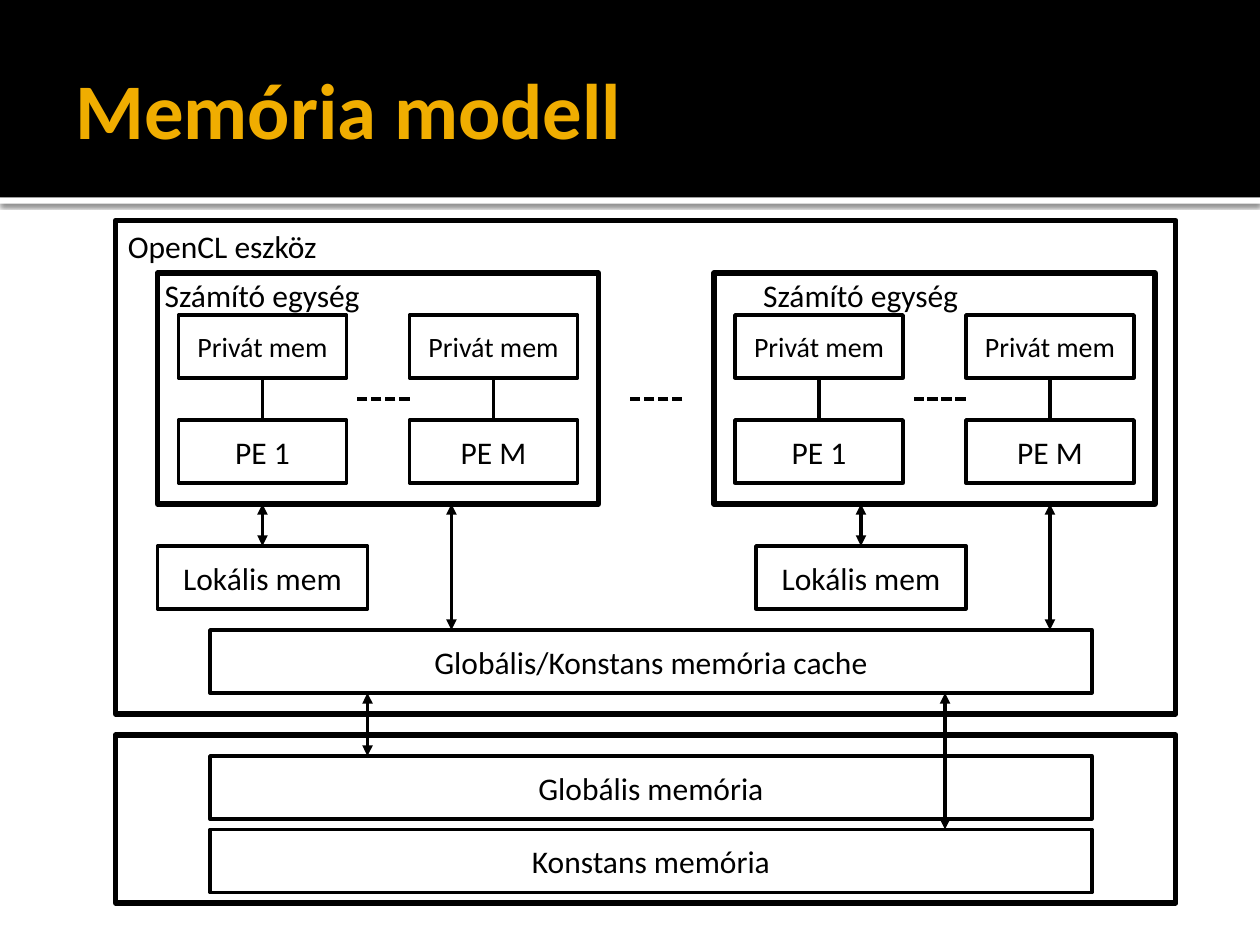
import pptx
import pptx.dml.color
import pptx.enum.dml
import pptx.enum.shapes
import pptx.enum.text
import pptx.oxml
import pptx.oxml.ns
import pptx.util

BLACK = pptx.dml.color.RGBColor(0x00, 0x00, 0x00)
WHITE = pptx.dml.color.RGBColor(0xFF, 0xFF, 0xFF)
AMBER = pptx.dml.color.RGBColor(0xF0, 0xAD, 0x00)
FONT = "Calibri"
CELL_HEIGHT = 6
PE_WIDTH = 16
LOCAL_WIDTH = 20
MEMORY_WIDTH = 84
THIN, THICK = 2, 3


def grid(steps):
    """Length of grid steps; twelve steps make one inch."""
    return pptx.util.Cm(steps * 2.54 / 12)


def write(shape, text, size=18, color=BLACK, bold=False,
          align=pptx.enum.text.PP_ALIGN.LEFT,
          anchor=pptx.enum.text.MSO_ANCHOR.TOP):
    frame = shape.text_frame
    frame.word_wrap = True
    frame.vertical_anchor = anchor
    paragraph = frame.paragraphs[0]
    paragraph.alignment = align
    run = paragraph.add_run()
    run.text = text
    run.font.name = FONT
    run.font.size = pptx.util.Pt(size)
    run.font.bold = bold
    run.font.color.rgb = color


def add_label(slide, text, left, top, width, height, **text_format):
    label = slide.shapes.add_textbox(grid(left), grid(top), grid(width), grid(height))
    write(label, text, **text_format)
    return label


def add_box(slide, left, top, width, height, text="", size=18,
            fill=WHITE, weight=THIN):
    box = slide.shapes.add_shape(
        pptx.enum.shapes.MSO_SHAPE.RECTANGLE,
        grid(left), grid(top), grid(width), grid(height))
    box.shadow.inherit = False
    box.fill.solid()
    box.fill.fore_color.rgb = fill
    if weight:
        box.line.color.rgb = BLACK
        box.line.width = pptx.util.Pt(weight)
    else:
        box.line.fill.background()
    if text:
        write(box, text, size=size, align=pptx.enum.text.PP_ALIGN.CENTER,
              anchor=pptx.enum.text.MSO_ANCHOR.MIDDLE)
    return box


def add_line(slide, x1, y1, x2, y2, arrows=False, dashed=False):
    line = slide.shapes.add_connector(
        pptx.enum.shapes.MSO_CONNECTOR.STRAIGHT,
        grid(x1), grid(y1), grid(x2), grid(y2))
    line.line.color.rgb = BLACK
    line.line.width = pptx.util.Pt(THIN)
    if dashed:
        line.line.dash_style = pptx.enum.dml.MSO_LINE.SQUARE_DOT
    if arrows:
        outline = line.line._get_or_add_ln()
        for end in ("a:headEnd", "a:tailEnd"):
            pptx.oxml.ns.qn(end)
            tip = outline.makeelement(pptx.oxml.ns.qn(end), {"type": "triangle"})
            outline.append(tip)
    properties = line._element.spPr
    properties.append(properties.makeelement(pptx.oxml.ns.qn("a:effectLst"), {}))


def add_ellipsis(slide, left, y):
    add_line(slide, left + 5, y, left, y, dashed=True)


def add_header(slide, width, height):
    stripe = add_box(slide, 0, height, width, 0.6, weight=0)
    effects = stripe._element.spPr.find(pptx.oxml.ns.qn("a:effectLst"))
    effects.append(pptx.oxml.parse_xml(
        '<a:outerShdw xmlns:a="http://schemas.openxmlformats.org/drawingml/2006/main"'
        ' blurRad="31750" dist="10160" dir="5400000" algn="tl" rotWithShape="0">'
        '<a:srgbClr val="000000"><a:alpha val="60000"/></a:srgbClr></a:outerShdw>'))
    add_box(slide, 0, 0, width, height, fill=BLACK, weight=0)
    title = add_label(slide, "Memória modell", 6, 2, width - 12, 16.5,
                      size=45, color=AMBER, bold=True,
                      anchor=pptx.enum.text.MSO_ANCHOR.MIDDLE)
    title.text_frame.margin_right = pptx.util.Cm(0.13)


def add_processing_element(slide, left, top, name):
    """Private memory joined to the processing element below it."""
    middle = left + PE_WIDTH / 2
    add_box(slide, left, top, PE_WIDTH, CELL_HEIGHT, "Privát mem", size=16)
    add_line(slide, middle, top + CELL_HEIGHT, middle, top + 10)
    add_box(slide, left, top + 10, PE_WIDTH, CELL_HEIGHT, name)


def add_compute_unit(slide, left, top, shift):
    """Compute unit; shift moves its label, local memory and arrows right."""
    width, height = 42, 22
    bottom = top + height
    add_box(slide, left, top, width, height, weight=THICK)
    for offset, name in ((2, "PE 1"), (24, "PE M")):
        add_processing_element(slide, left + offset, top + 4, name)
    add_ellipsis(slide, left + 19, top + 12)

    local_left = left + shift
    add_label(slide, "Számító egység", local_left - 0.5, top - 0.3, 26.6, 4.8)
    add_box(slide, local_left, bottom + 4, LOCAL_WIDTH, CELL_HEIGHT, "Lokális mem")
    for offset, length in ((LOCAL_WIDTH / 2, 4), (28, 12)):
        x = local_left + offset
        add_line(slide, x, bottom, x, bottom + length, arrows=True)


def add_device(slide, left, top, width, height):
    add_box(slide, left, top, width, height, weight=THICK)
    add_label(slide, "OpenCL eszköz", left, top, 22, 4.8)
    for offset, shift in ((4, 0), (57, 4)):
        add_compute_unit(slide, left + offset, top + 5, shift)
    add_ellipsis(slide, left + 49, top + 17)
    add_box(slide, left + 9, top + 39, MEMORY_WIDTH, CELL_HEIGHT,
            "Globális/Konstans memória cache")


def add_device_memory(slide, left, top, width, height):
    """Memory outside the device, with arrows up to the cache."""
    add_box(slide, left, top, width, height, weight=THICK)
    memories = (("Globális memória", 2, 24), ("Konstans memória", 9, 79))
    for name, row, _ in memories:
        add_box(slide, left + 9, top + row, MEMORY_WIDTH, CELL_HEIGHT, name)
    for _, row, column in memories:
        add_line(slide, left + column, top - 4, left + column, top + row, arrows=True)


def main():
    deck = pptx.Presentation()
    deck.slide_width = grid(120)
    deck.slide_height = grid(90)
    slide = deck.slides.add_slide(deck.slide_layouts[6])
    add_header(slide, 120, 18.8)
    add_device(slide, 11, 21, 101, 47)
    add_device_memory(slide, 11, 70, 101, 16)
    deck.save("out.pptx")


if __name__ == "__main__":
    main()
